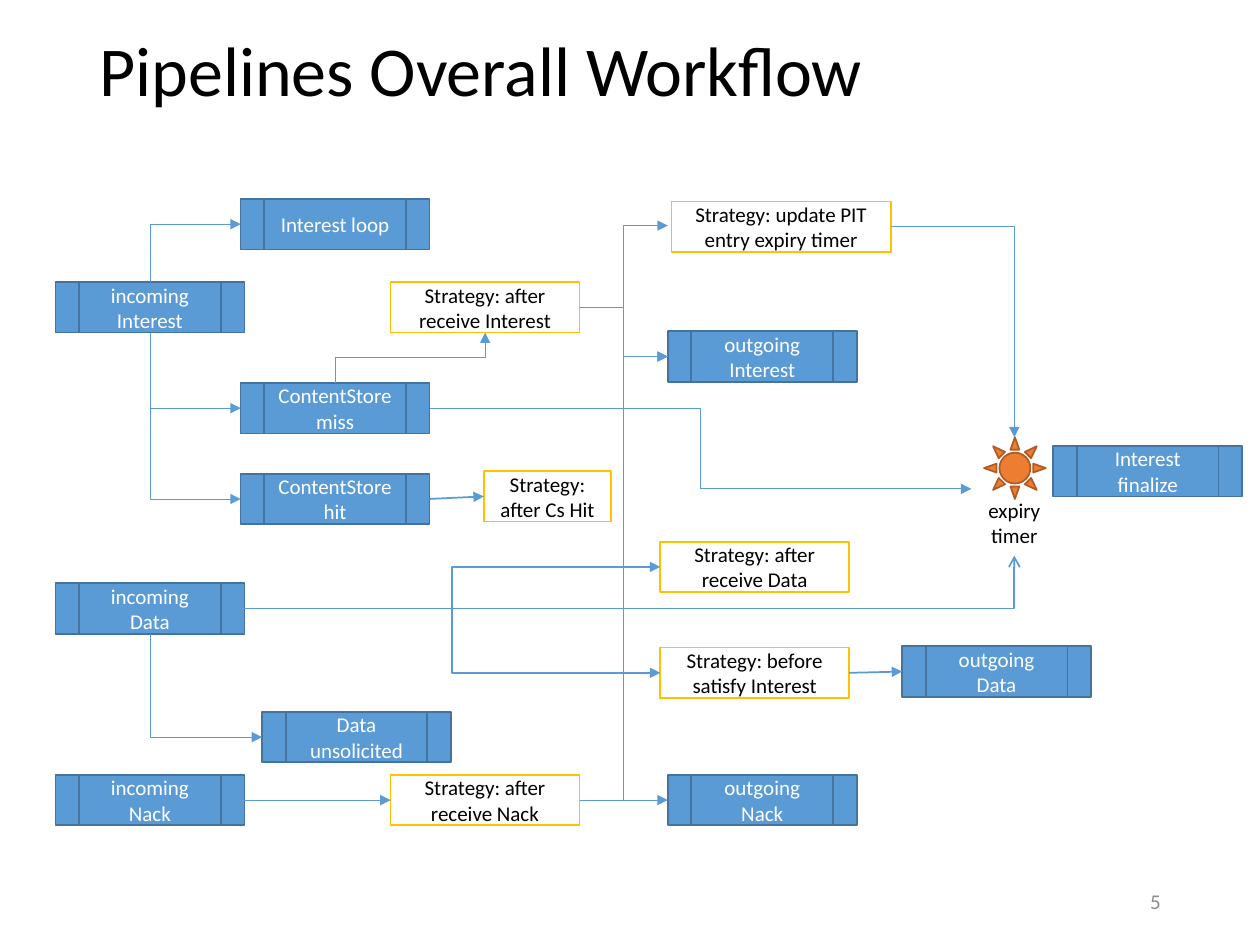
from typing import NamedTuple

from lxml.etree import SubElement
from pptx import Presentation
from pptx.dml.color import RGBColor
from pptx.enum.shapes import MSO_CONNECTOR as Link, MSO_SHAPE as Shape
from pptx.enum.text import MSO_ANCHOR as Anchor, PP_ALIGN as Align
from pptx.oxml.ns import qn
from pptx.util import Inches, Pt

COLORS = {
    "pipeline": "5B9BD5", "pipeline_edge": "43739E",
    "strategy": "FFFFFF", "strategy_edge": "FFC000",
    "timer": "ED7D31", "timer_edge": "AF5C24",
    "flow": "5B9BD5", "light": "FFFFFF", "dark": "000000", "number": "8C8C8C",
}
FONT = "Calibri"
BOX_HEIGHT = 0.4


class Point(NamedTuple):
    x: float
    y: float


class Box(NamedTuple):
    label: str
    x: float
    y: float
    width: float = 1.5
    kind: str = "pipeline"

    @property
    def left(self) -> Point:
        return Point(self.x, self.y + BOX_HEIGHT / 2)

    @property
    def right(self) -> Point:
        return Point(self.x + self.width, self.y + BOX_HEIGHT / 2)

    @property
    def top(self) -> Point:
        return Point(self.x + self.width / 2, self.y)

    @property
    def bottom(self) -> Point:
        return Point(self.x + self.width / 2, self.y + BOX_HEIGHT)


class Flow(NamedTuple):
    start: Point
    end: Point
    preset: str = "bentConnector3"
    vertical_first: bool = False
    weight: float = 0.5
    head: str = "triangle"


def rgb(name: str) -> RGBColor:
    return RGBColor.from_string(COLORS[name])


def write(shape, text: str, size: float, color: str, align=Align.CENTER,
          anchor=Anchor.MIDDLE, wrap: bool = True) -> None:
    frame = shape.text_frame
    frame.text = text
    frame.word_wrap = wrap
    frame.vertical_anchor = anchor
    paragraph = frame.paragraphs[0]
    paragraph.alignment = align
    paragraph.font.size = Pt(size)
    paragraph.font.name = FONT
    paragraph.font.color.rgb = rgb(color)


def paint(shape, kind: str) -> None:
    shape.shadow.inherit = False
    shape.fill.solid()
    shape.fill.fore_color.rgb = rgb(kind)
    shape.line.color.rgb = rgb(f"{kind}_edge")
    shape.line.width = Pt(1)


def draw_box(shapes, box: Box) -> None:
    is_pipeline = box.kind == "pipeline"
    preset = Shape.FLOWCHART_PREDEFINED_PROCESS if is_pipeline else Shape.RECTANGLE
    shape = shapes.add_shape(preset, Inches(box.x), Inches(box.y),
                             Inches(box.width), Inches(BOX_HEIGHT))
    paint(shape, box.kind)
    write(shape, box.label, 12, "light" if is_pipeline else "dark")


def draw_flow(shapes, flow: Flow) -> None:
    start, end = flow.start, flow.end
    goes_down = end.y > start.y
    if flow.vertical_first:
        # Lay the bend out sideways about its centre; the rotation turns it upright
        mid_x, mid_y = (start.x + end.x) / 2, (start.y + end.y) / 2
        half_w, half_h = abs(end.y - start.y) / 2, abs(end.x - start.x) / 2
        side = -half_h if goes_down else half_h
        start = Point(mid_x + half_w, mid_y + side)
        end = Point(mid_x - half_w, mid_y - side)
    link = Link.STRAIGHT if flow.preset == "line" else Link.ELBOW
    connector = shapes.add_connector(link, Inches(start.x), Inches(start.y),
                                     Inches(end.x), Inches(end.y))
    connector.line.color.rgb = rgb("flow")
    connector.line.width = Pt(flow.weight)
    properties = connector.element.spPr
    properties.find(qn("a:prstGeom")).set("prst", flow.preset)
    if flow.vertical_first:
        degrees = 270 if goes_down else 90
        properties.find(qn("a:xfrm")).set("rot", str(degrees * 60000))
    SubElement(properties.find(qn("a:ln")), qn("a:tailEnd"), type=flow.head)
    SubElement(properties, qn("a:effectLst"))


def draw_timer(shapes) -> None:
    timer = shapes.add_group_shape().shapes
    sun = timer.add_shape(Shape.SUN, Inches(7.81), Inches(3.47), Inches(0.49), Inches(0.49))
    paint(sun, "timer")
    caption = timer.add_textbox(Inches(7.74), Inches(3.9), Inches(0.62), Inches(0.5))
    write(caption, "expiry\vtimer", 12, "dark", anchor=Anchor.TOP, wrap=False)


# Pipelines
in_interest = Box("incoming Interest", 0.44, 2.24)
in_data = Box("incoming Data", 0.44, 4.63)
in_nack = Box("incoming Nack", 0.44, 6.15)
interest_loop = Box("Interest loop", 1.91, 1.58)
store_miss = Box("ContentStore miss", 1.91, 3.04)
store_hit = Box("ContentStore hit", 1.91, 3.76)
unsolicited = Box("Data unsolicited", 2.08, 5.65)
out_interest = Box("outgoing Interest", 5.3, 2.63)
out_data = Box("outgoing Data", 7.16, 5.13)
out_nack = Box("outgoing Nack", 5.3, 6.15)
finalize = Box("Interest finalize", 8.36, 3.54)

# Strategy triggers
after_interest = Box("Strategy: after receive Interest", 3.1, 2.24, kind="strategy")
after_hit = Box("Strategy: after Cs Hit", 3.84, 3.74, 1.01, "strategy")
after_data = Box("Strategy: after receive Data", 5.24, 4.3, kind="strategy")
before_satisfy = Box("Strategy: before satisfy Interest", 5.24, 5.14, kind="strategy")
after_nack = Box("Strategy: after receive Nack", 3.1, 6.15, kind="strategy")
update_expiry = Box("Strategy: update PIT entry expiry timer", 5.33, 1.6, 1.74, "strategy")

BOXES = [
    in_interest, in_data, in_nack, interest_loop, store_miss, store_hit,
    unsolicited, out_interest, out_data, out_nack, finalize, after_interest,
    after_hit, after_data, before_satisfy, after_nack, update_expiry,
]

CORNER = "bentConnector2"
FLOWS = [
    # Interest
    Flow(in_interest.top, interest_loop.left, CORNER, True),
    Flow(in_interest.bottom, store_miss.left, CORNER, True),
    Flow(in_interest.bottom, store_hit.left, CORNER, True),
    Flow(store_miss.top, after_interest.bottom, vertical_first=True),
    Flow(store_hit.right, after_hit.left, "line", weight=1),
    Flow(after_interest.right, Point(5.3, 1.79)),
    Flow(after_interest.right, out_interest.left),
    # Expiry timer
    Flow(update_expiry.right, Point(8.05, 3.47), CORNER),
    Flow(store_miss.right, Point(7.71, 3.88)),
    Flow(in_data.right, Point(8.05, 4.41), CORNER, weight=1, head="arrow"),
    # Data
    Flow(in_data.bottom, unsolicited.left, CORNER, True),
    Flow(in_data.right, after_data.left, weight=1),
    Flow(in_data.right, before_satisfy.left, weight=1),
    Flow(before_satisfy.right, out_data.left, "line", weight=1),
    # Nack
    Flow(in_nack.right, after_nack.left, "line"),
    Flow(after_nack.right, out_nack.left, "line"),
    Flow(after_nack.right, out_interest.left),
]


def main() -> None:
    deck = Presentation()
    deck.slide_width, deck.slide_height = Inches(10), Inches(7.5)
    shapes = deck.slides.add_slide(deck.slide_layouts[6]).shapes

    # Title and page number
    title = shapes.add_textbox(Inches(0.69), Inches(0.02), Inches(8.62), Inches(1.14))
    write(title, "Pipelines Overall Workflow", 40, "dark", Align.LEFT)
    title.text_frame.paragraphs[0].line_spacing = 0.9
    number = shapes.add_textbox(Inches(7.06), Inches(6.95), Inches(2.25), Inches(0.4))
    write(number, "5", 12, "number", Align.RIGHT)

    # Workflow
    for box in BOXES:
        draw_box(shapes, box)
    draw_timer(shapes)
    for flow in FLOWS:
        draw_flow(shapes, flow)

    deck.save("out.pptx")


if __name__ == "__main__":
    main()
